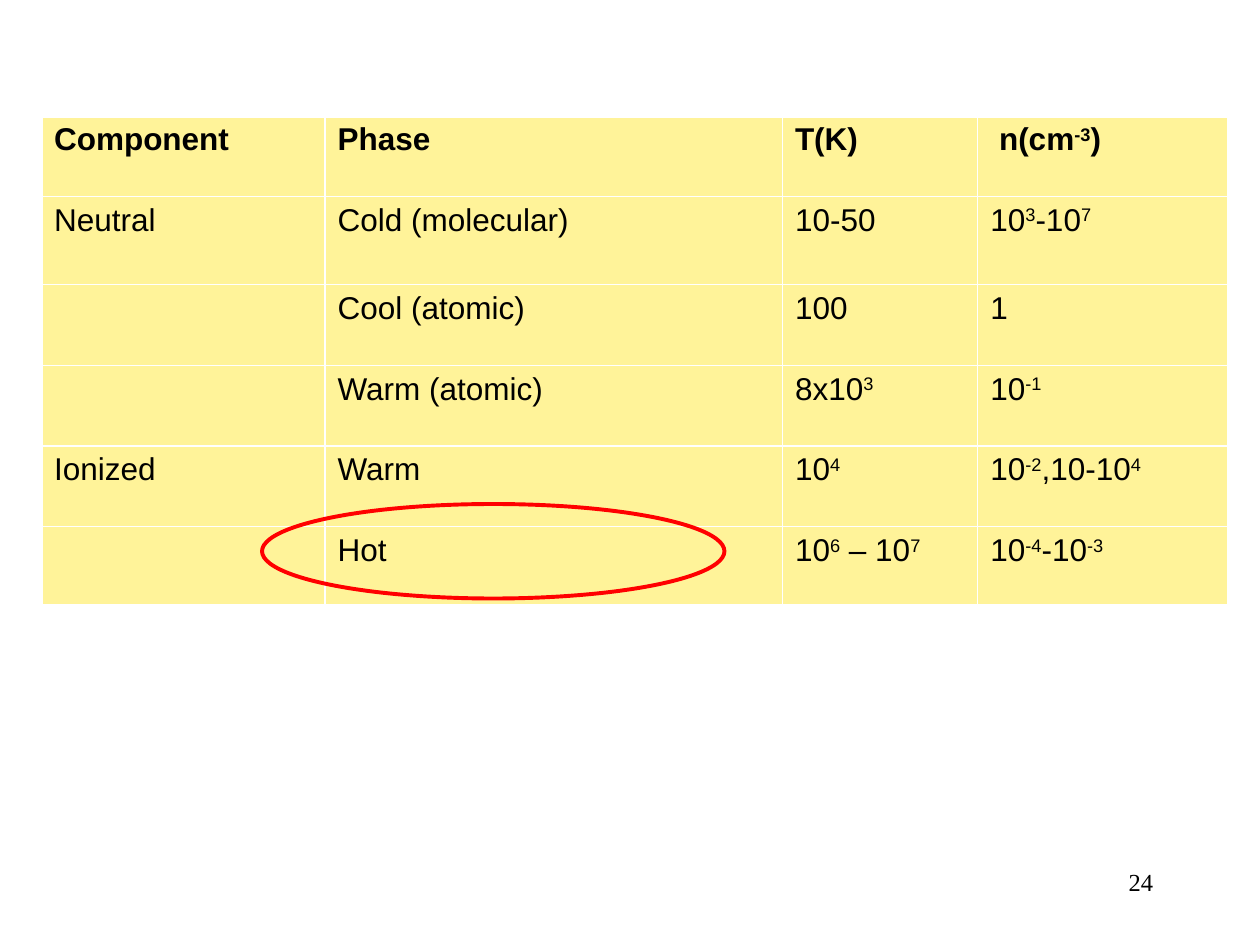
import pptx
import pptx.util
import pptx.dml.color
import pptx.enum.shapes
import pptx.enum.text
import pptx.oxml
import pptx.oxml.ns

Inches, Pt = pptx.util.Inches, pptx.util.Pt

COLORS = {"cell": "FFF399", "border": "FFFFFF", "text": "000000", "ring": "FF0000"}

# Text between a pair of bars is superscript.
ROWS = [
    ["Component", "Phase", "T(K)", " n(cm|-3|)"],
    ["Neutral", "Cold (molecular)", "10-50", "10|3|-10|7|"],
    ["", "Cool (atomic)", "100", "1"],
    ["", "Warm (atomic)", "8x10|3|", "10|-1|"],
    ["Ionized", "Warm", "10|4|", "10|-2|,10-10|4|"],
    ["", "Hot", "10|6| – 10|7|", "10|-4|-10|-3|"],
]
COL_WIDTHS = [2.25, 3.63, 1.55, 1.99]
ROW_HEIGHTS = [0.64, 0.7, 0.64, 0.64, 0.64, 0.63]
TABLE_LEFT, TABLE_TOP = 0.33, 0.92
RING = (2.08, 4, 3.67, 0.75)
PAGE_NUMBER, PAGE_NUMBER_BOX = "24", (7.17, 6.83, 2.08, 0.5)
INNER_BORDER, OUTER_BORDER = 1, 2.25


def rgb(name):
    return pptx.dml.color.RGBColor.from_string(COLORS[name])


def add_run(p, text, **formats):
    r = p.add_run()
    r.text = text
    r.font.color.rgb = rgb("text")
    for name, value in formats.items():
        setattr(r.font, name, value)
    return r


def write_cell(cell, text, bold):
    p = cell.text_frame.paragraphs[0]
    for i, piece in enumerate(text.split("|")):
        if piece:
            r = add_run(p, piece, name="Arial", size=Pt(18), bold=bold)
            if i % 2:
                r.font._element.set("baseline", "30000")


def set_borders(cell, widths):
    """Draw the sides in widths, a dict of tag to points in schema order."""
    tc_pr = cell._tc.get_or_add_tcPr()
    for i, (tag, width) in enumerate(widths.items()):
        tc_pr.insert(i, pptx.oxml.parse_xml(
            f'<a:{tag} {pptx.oxml.ns.nsdecls("a")} w="{Pt(width)}"><a:solidFill>'
            f'<a:srgbClr val="{COLORS["border"]}"/></a:solidFill></a:{tag}>'))


def add_phase_table(s):
    n_rows, n_cols = len(ROWS), len(COL_WIDTHS)
    size = Inches(sum(COL_WIDTHS)), Inches(sum(ROW_HEIGHTS))
    table = s.shapes.add_table(
        n_rows, n_cols, Inches(TABLE_LEFT), Inches(TABLE_TOP), *size).table
    table.horz_banding = False
    for column, width in zip(table.columns, COL_WIDTHS):
        column.width = Inches(width)
    for row, height in zip(table.rows, ROW_HEIGHTS):
        row.height = Inches(height)
    for i, texts in enumerate(ROWS):
        for j, text in enumerate(texts):
            cell = table.cell(i, j)
            cell.fill.solid()
            cell.fill.fore_color.rgb = rgb("cell")
            write_cell(cell, text, bold=i == 0)
            outer = {"lnL": j == 0, "lnR": j == n_cols - 1,
                     "lnT": i == 0, "lnB": i == n_rows - 1}
            set_borders(cell, {tag: OUTER_BORDER if edge else INNER_BORDER
                               for tag, edge in outer.items()})


def add_ring(s):
    sp = s.shapes.add_shape(
        pptx.enum.shapes.MSO_SHAPE.OVAL, *map(Inches, RING))
    sp.shadow.inherit = False
    sp.fill.background()
    sp.line.color.rgb = rgb("ring")
    sp.line.width = Pt(2.25)


def add_page_number(s):
    tf = s.shapes.add_textbox(*map(Inches, PAGE_NUMBER_BOX)).text_frame
    tf.word_wrap = True
    p = tf.paragraphs[0]
    p.alignment = pptx.enum.text.PP_ALIGN.RIGHT
    add_run(p, PAGE_NUMBER, name="Times New Roman", size=Pt(14))


def main():
    prs = pptx.Presentation()
    prs.slide_width, prs.slide_height = Inches(10), Inches(7.5)
    s = prs.slides.add_slide(prs.slide_layouts[6])
    add_phase_table(s)
    add_ring(s)
    add_page_number(s)
    prs.save("out.pptx")


if __name__ == "__main__":
    main()
